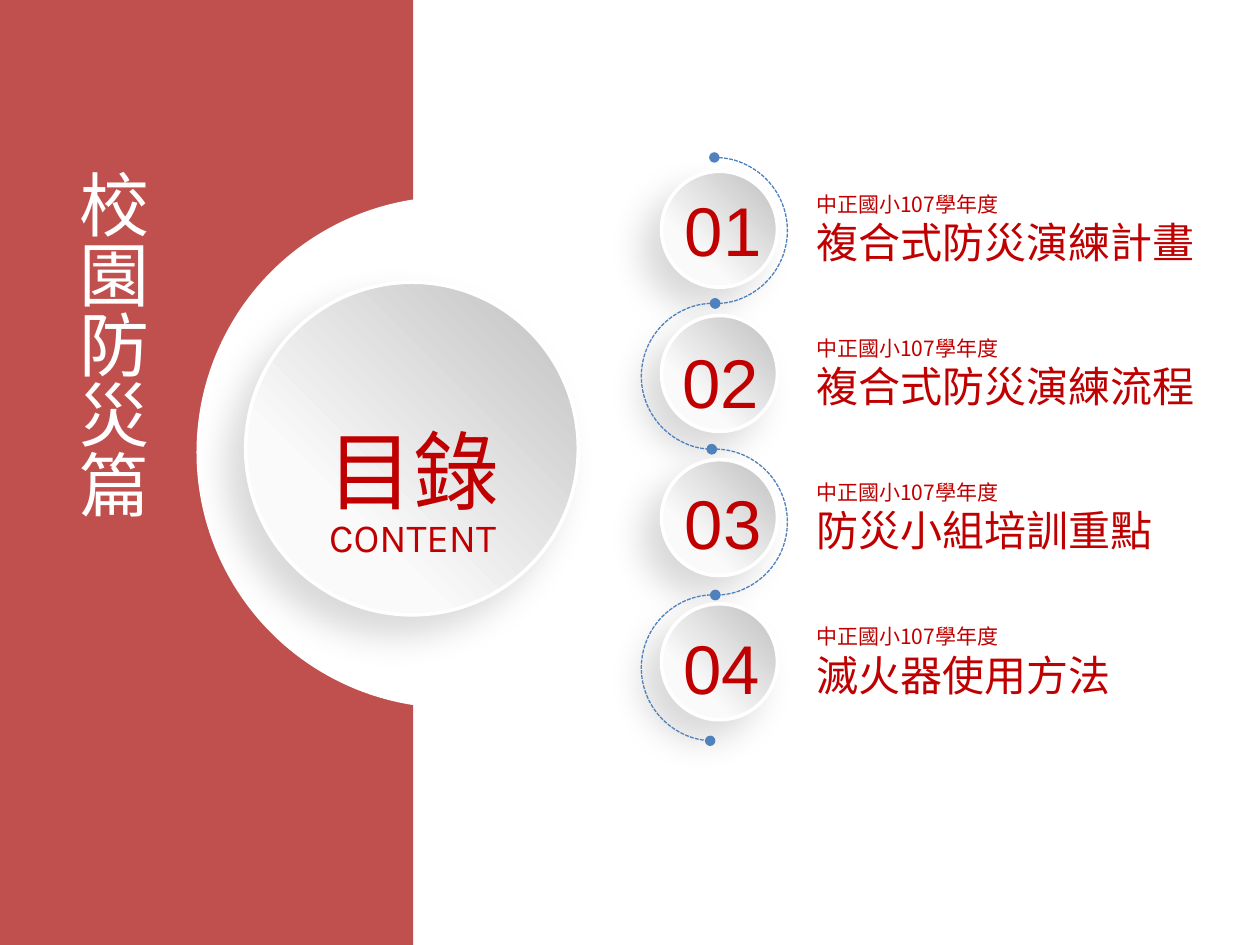
"""Build the contents slide of a campus disaster prevention deck."""
from dataclasses import dataclass

from lxml import etree
from pptx import Presentation
from pptx.dml.color import RGBColor
from pptx.enum.dml import MSO_LINE
from pptx.enum.shapes import MSO_SHAPE
from pptx.enum.text import MSO_ANCHOR, MSO_AUTO_SIZE, PP_ALIGN
from pptx.oxml.ns import qn
from pptx.util import Inches, Pt

OVAL, RECTANGLE, ARC = MSO_SHAPE.OVAL, MSO_SHAPE.RECTANGLE, MSO_SHAPE.ARC
CENTER, LEFT, JUSTIFY = PP_ALIGN.CENTER, PP_ALIGN.LEFT, PP_ALIGN.JUSTIFY
TOP, MIDDLE = MSO_ANCHOR.TOP, MSO_ANCHOR.MIDDLE
FIT_SHAPE, DASH = MSO_AUTO_SIZE.SHAPE_TO_FIT_TEXT, MSO_LINE.SQUARE_DOT

WIDTH, HEIGHT = Inches(10), Inches(7.5)
COLUMNS, ROWS = 100, 75
TITLE_ONLY = 5
ROW_PITCH, ARC_PITCH = 11.44, 11.57


@dataclass(frozen=True)
class Theme:
    panel: str = "C0504D"
    white: str = "FFFFFF"
    accent: str = "C00000"
    trail: str = "4F81BD"
    disc_dark: str = "BFBFBF"
    disc_light: str = "FAFAFA"
    chinese: str = "Noto Sans CJK SC"
    latin: str = "Karla"
    digits: str = "Arial"
    title: float = 84.4
    subtitle: float = 39.4
    number: float = 39.4
    side: float = 40
    heading: float = 24
    caption: float = 12


@dataclass(frozen=True)
class Frame:
    column: float
    row: float
    columns: float
    rows: float

    def emu(self) -> tuple[int, int, int, int]:
        """Return left, top, width and height in slide units."""
        across, down = WIDTH / COLUMNS, HEIGHT / ROWS
        return (round(self.column * across), round(self.row * down),
                round(self.columns * across), round(self.rows * down))


@dataclass(frozen=True)
class Style:
    size: float
    font: str
    color: str
    align: PP_ALIGN = LEFT
    spacing: float = 1.0
    baseline: int = 0


@dataclass(frozen=True)
class Topic:
    number: str
    heading: str
    number_column: float
    number_row: float
    text_columns: float
    arc_start: float
    arc_end: float


THEME = Theme()
CAPTION = "中正國小107學年度"
TOPICS = (
    Topic("01", "複合式防災演練計畫", 53.3, 14.4, 32.3, 162, 53.57),
    Topic("02", "複合式防災演練流程", 53.1, 26.4, 32.3, 161.69, 52.82),
    Topic("03", "防災小組培訓重點", 53.3, 37.6, 28.9, 160.73, 53.57),
    Topic("04", "滅火器使用方法", 53.2, 49.1, 25.6, 161.53, 52.02),
)


def add_figure(page, kind: MSO_SHAPE, frame: Frame, color: str | None = None):
    """Add a preset shape without line or shadow."""
    shape = page.shapes.add_shape(kind, *frame.emu())
    shape.shadow.inherit = False
    shape.line.fill.background()
    if color:
        shape.fill.solid()
        shape.fill.fore_color.rgb = RGBColor.from_string(color)
    else:
        shape.fill.background()
    return shape


def add_disc(page, frame: Frame) -> None:
    """Add a shaded disc with a white rim and a soft shadow."""
    disc = add_figure(page, OVAL, frame)
    disc.fill.gradient()
    disc.fill.gradient_angle = 225
    stops = ((0, THEME.disc_dark), (0.7, THEME.disc_light))
    for stop, (position, color) in zip(disc.fill.gradient_stops, stops):
        stop.position = position
        stop.color.rgb = RGBColor.from_string(color)
    disc.line.color.rgb = RGBColor.from_string(THEME.white)
    disc.line.width = Pt(2)
    effects = disc._element.spPr.find(qn("a:effectLst"))
    shadow = etree.SubElement(effects, qn("a:outerShdw"), blurRad=str(Pt(20)),
                              dist=str(Pt(15)), dir="8100000", algn="tr", rotWithShape="0")
    black = etree.SubElement(shadow, qn("a:srgbClr"), val="000000")
    etree.SubElement(black, qn("a:alpha"), val="15000")


def add_arc(page, frame: Frame, topic: Topic, flipped: bool) -> None:
    """Add a dashed half circle with round ends."""
    arc = add_figure(page, ARC, frame)
    arc.adjustments[0], arc.adjustments[1] = topic.arc_start, topic.arc_end
    arc.line.color.rgb = RGBColor.from_string(THEME.trail)
    arc.line.width = Pt(0.75)
    arc.line.dash_style = DASH
    for end in ("a:headEnd", "a:tailEnd"):
        etree.SubElement(arc.line._get_or_add_ln(), qn(end), type="oval")
    if flipped:
        arc._element.spPr.find(qn("a:xfrm")).set("flipH", "1")


def write(box, lines: list[tuple[str, Style]], anchor: MSO_ANCHOR = MIDDLE,
          wrap: bool = False) -> None:
    """Fill a text shape with one styled run per paragraph."""
    frame = box.text_frame
    frame.word_wrap = wrap
    frame.auto_size = FIT_SHAPE
    frame.vertical_anchor = anchor
    for index, (text, style) in enumerate(lines):
        para = frame.add_paragraph() if index else frame.paragraphs[0]
        para.alignment = style.align
        para.line_spacing = style.spacing
        span = para.add_run()
        span.text = text
        span.font.size = Pt(style.size)
        span.font.name = style.font
        span.font.color.rgb = RGBColor.from_string(style.color)
        properties = span._r.get_or_add_rPr()
        etree.SubElement(properties, qn("a:ea"), typeface=style.font)
        if style.baseline:
            properties.set("baseline", str(style.baseline))


def add_text(page, frame: Frame, lines: list[tuple[str, Style]],
             anchor: MSO_ANCHOR = MIDDLE, wrap: bool = False):
    """Add a text box and fill it."""
    box = page.shapes.add_textbox(*frame.emu())
    write(box, lines, anchor, wrap)
    return box


def place_title(page) -> None:
    """Move the title placeholder onto the large disc and format it."""
    title = page.shapes.title
    page.shapes._spTree.append(title._element)
    title.left, title.top, title.width, title.height = Frame(23.9, 26.4, 17.8, 13.5).emu()
    write(title, [("目錄", Style(THEME.title, THEME.chinese, THEME.accent, CENTER, 1.5, 12000))])


def add_topics(page) -> None:
    """Add the numbered discs, the winding trail and the topic texts."""
    number = Style(THEME.number, THEME.digits, THEME.accent, CENTER)
    caption = Style(THEME.caption, THEME.chinese, THEME.accent)
    heading = Style(THEME.heading, THEME.chinese, THEME.accent)
    for index, topic in enumerate(TOPICS):
        add_disc(page, Frame(52.5, 13.6 + index * ROW_PITCH, 9.2, 9.2))
        add_text(page, Frame(topic.number_column, topic.number_row, 8.2, 7.6),
                 [(topic.number, number)])
    for index, topic in enumerate(TOPICS):
        add_arc(page, Frame(50.9, 12.5 + index * ARC_PITCH, 11.6, 11.6), topic, index % 2 == 1)
        add_text(page, Frame(63.8, 14.7 + index * ROW_PITCH, topic.text_columns, 7.1),
                 [(CAPTION, caption), (topic.heading, heading)], TOP)


def main() -> None:
    """Build and save the deck."""
    deck = Presentation()
    deck.slide_width, deck.slide_height = WIDTH, HEIGHT
    page = deck.slides.add_slide(deck.slide_layouts[TITLE_ONLY])
    add_figure(page, RECTANGLE, Frame(0, 0, 32.8, ROWS), THEME.panel)
    add_figure(page, OVAL, Frame(15.6, 15.6, 40.6, 40.6), THEME.white)
    add_disc(page, Frame(19.5, 22.4, 26.4, 26.4))
    place_title(page)
    add_text(page, Frame(24.3, 37.3, 16.9, 6.8),
             [("CONTENT", Style(THEME.subtitle, THEME.latin, THEME.accent, CENTER, 1.5, 12000))])
    add_topics(page)
    side = add_text(page, Frame(3.9, 12.5, 8.8, 43.8),
                    [("校園防災篇", Style(THEME.side, THEME.chinese, THEME.white, JUSTIFY))],
                    TOP, True)
    side.text_frame._txBody.bodyPr.set("vert", "eaVert")
    deck.save("out.pptx")


if __name__ == "__main__":
    main()
